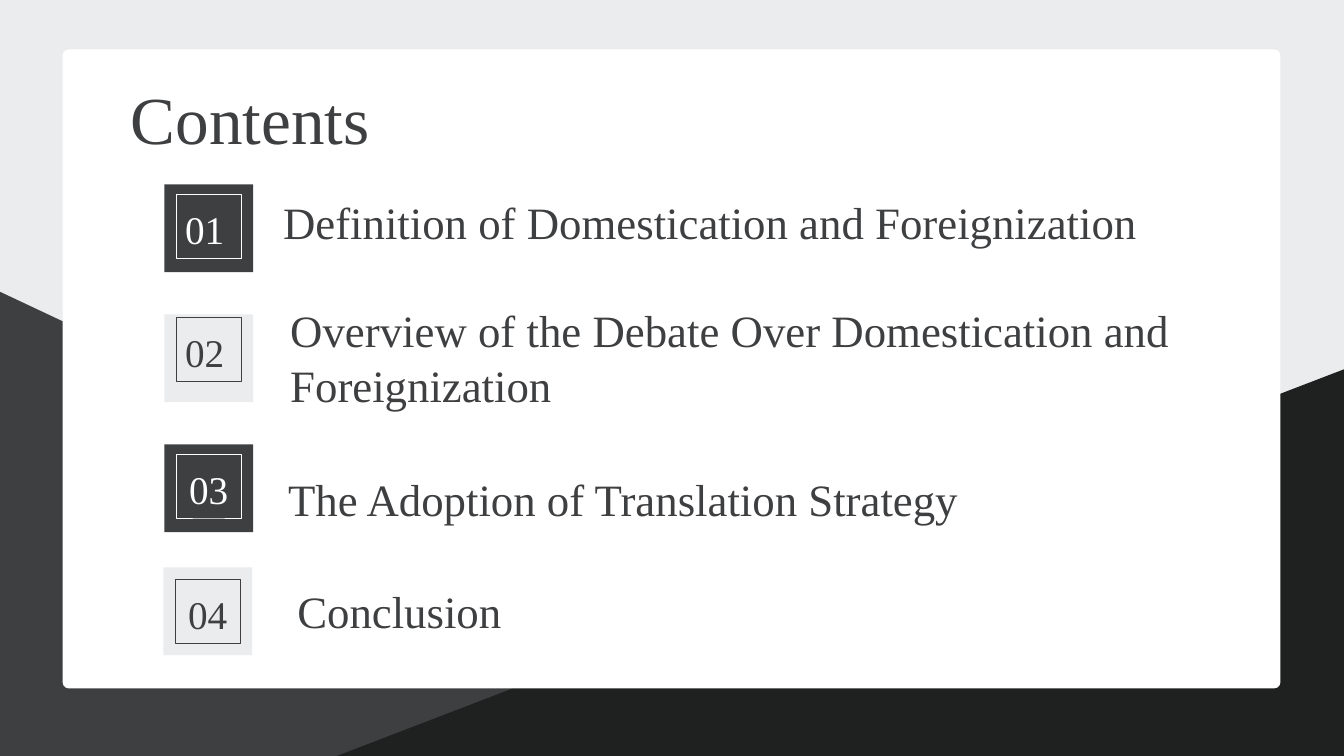
from pptx import Presentation
from pptx import util as u
from pptx.dml.color import RGBColor
from pptx.enum import shapes, text

COLORS = {"pale": "EBECED", "slate": "3E3F41", "black": "1F2020", "white": "FFFFFF"}
FONT = "Times New Roman"
LINE_FACTOR = 1.21
WIDTH, HEIGHT = 13.33, 7.5
TILE = (0.88, 0.87)
FRAME = (0.64, 0.63)
FRAME_INSET = 0.12
NUMBER = (0.66, 0.57)

BACKDROP = [
    (shapes.MSO_SHAPE.RIGHT_TRIANGLE, (-0.01, 2.89, 9.82, 4.62), 0, "slate"),
    (shapes.MSO_SHAPE.ISOSCELES_TRIANGLE, (6.42, 0.58, 3.84, 10), 270, "black"),
    (shapes.MSO_SHAPE.ROUNDED_RECTANGLE, (0.62, 0.49, 12.08, 6.34), 0, "white"),
]
ADJUSTMENTS = {
    shapes.MSO_SHAPE.ISOSCELES_TRIANGLE: 0,
    shapes.MSO_SHAPE.ROUNDED_RECTANGLE: 0.01,
}
TITLE = ("Contents", (1.2, 0.68, 4.5, 0.91))
ENTRIES = [
    {"label": "Definition of Domestication and Foreignization",
     "area": (2.71, 1.86, 9.14, 0.64), "tile": (1.63, 1.83), "drop": 0.1, "shift": -0.04},
    {"label": "Overview of the Debate Over Domestication and Foreignization",
     "area": (2.78, 2.93, 9.58, 1.18), "tile": (1.63, 3.12), "drop": 0.03, "shift": -0.04},
    {"label": "The Adoption of Translation Strategy",
     "area": (2.76, 4.6, 9.14, 0.64), "tile": (1.63, 4.41), "drop": 0.1, "shift": 0},
    {"label": "Conclusion",
     "area": (2.85, 5.71, 9.58, 0.64), "tile": (1.62, 5.63), "drop": 0.12, "shift": 0},
]
SCHEMES = [("slate", "white"), ("pale", "slate")]


def color(name):
    return RGBColor.from_string(COLORS[name])


def inches(area):
    return [u.Inches(length) for length in area]


def add_block(parent, kind, area, fill=None, line=None):
    block = parent.shapes.add_shape(kind, *inches(area))
    block.shadow.inherit = False
    if fill:
        block.fill.solid()
        block.fill.fore_color.rgb = color(fill)
    else:
        block.fill.background()
    if line:
        block.line.color.rgb = color(line)
        block.line.width = u.Pt(0.5)
    else:
        block.line.fill.background()
    return block


def add_text(parent, words, area, size, ink="slate", centred=False):
    frame = parent.shapes.add_textbox(*inches(area)).text_frame
    frame.word_wrap = not centred
    frame.margin_top = u.Inches(0.05) + u.Pt(size * 0.05)
    para = frame.paragraphs[0]
    para.line_spacing = u.Pt(size * LINE_FACTOR)
    para.alignment = text.PP_ALIGN.CENTER if centred else text.PP_ALIGN.LEFT
    span = para.add_run()
    span.text = words
    span.font.name = FONT
    span.font.size = u.Pt(size)
    span.font.color.rgb = color(ink)


def add_badge(page, number, entry):
    fill, ink = SCHEMES[(number - 1) % 2]
    left, top = entry["tile"]
    frame_top = top + entry["drop"]
    number_left = left + (TILE[0] - NUMBER[0]) / 2 + entry["shift"]
    badge = page.shapes.add_group_shape()
    square = shapes.MSO_SHAPE.RECTANGLE
    add_block(badge, square, (left, top, *TILE), fill=fill)
    add_text(badge, f"{number:02}", (number_left, frame_top + 0.03, *NUMBER), 28, ink, True)
    add_block(badge, square, (left + FRAME_INSET, frame_top, *FRAME), line=ink)


def main():
    deck = Presentation()
    deck.slide_width, deck.slide_height = inches((WIDTH, HEIGHT))
    page = deck.slides.add_slide(deck.slide_layouts[6])
    page.background.fill.solid()
    page.background.fill.fore_color.rgb = color("pale")
    for kind, area, turn, fill in BACKDROP:
        block = add_block(page, kind, area, fill=fill)
        block.rotation = turn
        if kind in ADJUSTMENTS:
            block.adjustments[0] = ADJUSTMENTS[kind]
    add_text(page, *TITLE, 48)
    for number, entry in enumerate(ENTRIES, 1):
        add_text(page, entry["label"], entry["area"], 32)
        add_badge(page, number, entry)
    deck.save("out.pptx")


if __name__ == "__main__":
    main()
